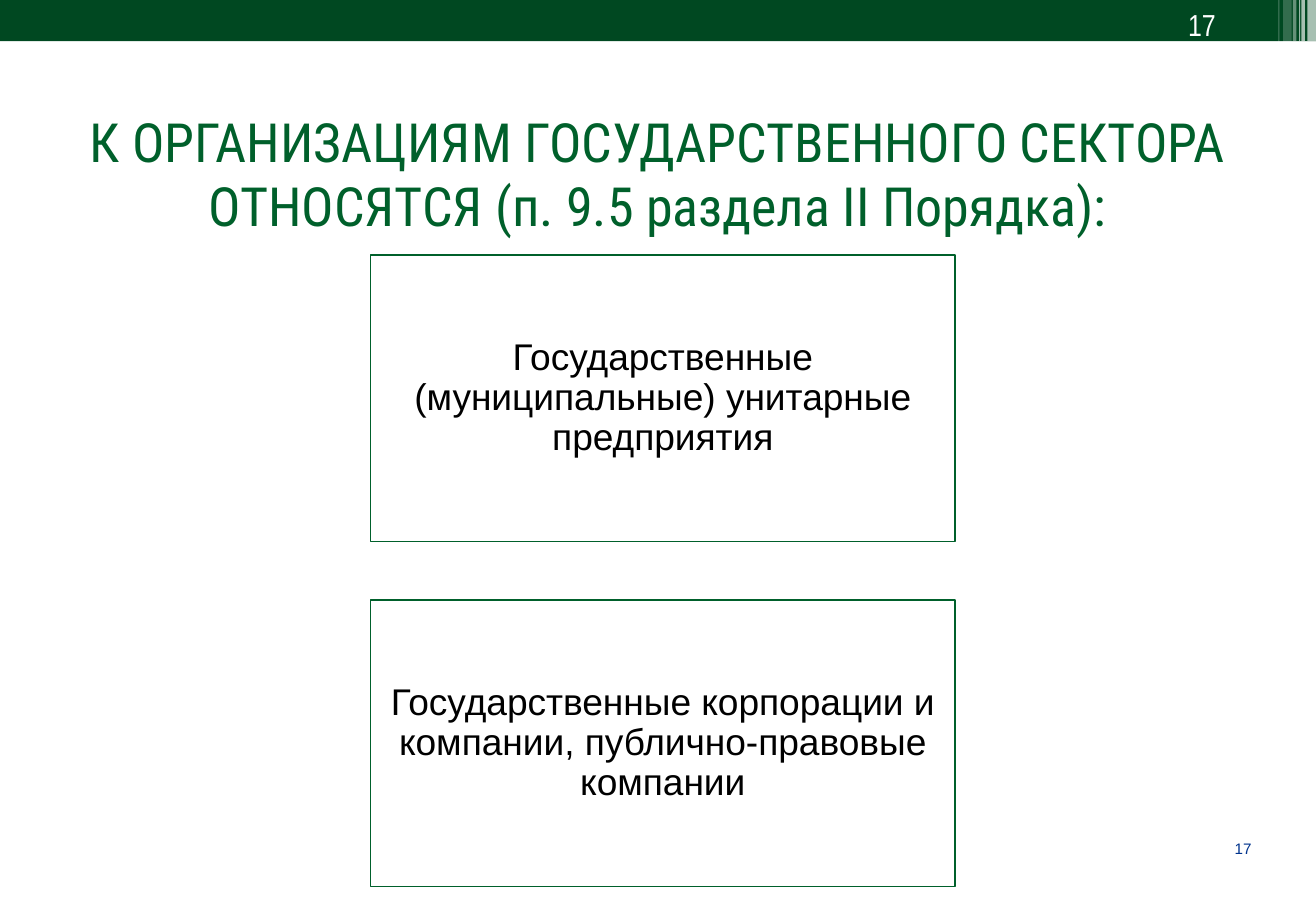
from pptx import Presentation
from pptx.dml.color import RGBColor
from pptx.enum.shapes import MSO_SHAPE as Shape
from pptx.enum.text import MSO_ANCHOR as Anchor, PP_ALIGN as Align
from pptx.oxml.ns import qn
from pptx.util import Inches, Pt
from lxml.etree import SubElement


def color(code):
    return RGBColor.from_string(code)


class SlideBuilder:
    WHITE = "FFFFFF"
    BLACK = "000000"
    GREEN = "00602B"
    DARK_GREEN = "004821"
    BLUE = "00338D"
    BODY_FONT = "Arial"
    NUMBER_FONT = "Arial Narrow"
    TITLE_FONT = "Roboto Condensed"

    def __init__(self, slide):
        self.slide = slide

    def set_text(self, frame, wording, size, font, ink, align, inset=None):
        frame.word_wrap = True
        if inset is not None:
            frame.margin_left = frame.margin_right = Inches(inset)
            frame.margin_top = frame.margin_bottom = Inches(inset)
        paragraph = frame.paragraphs[0]
        paragraph.text = wording
        paragraph.alignment = align
        paragraph.font.size = Pt(size)
        paragraph.font.name = font
        paragraph.font.color.rgb = color(ink)
        return paragraph

    def text(self, place, wording, size, font, ink, align=Align.LEFT, inset=None):
        box = self.slide.shapes.add_textbox(*map(Inches, place))
        self.set_text(box.text_frame, wording, size, font, ink, align, inset)

    def rectangle(self, place, fill, line=None, opacity=None):
        rectangle = self.slide.shapes.add_shape(Shape.RECTANGLE, *map(Inches, place))
        rectangle.shadow.inherit = False
        rectangle.fill.solid()
        rectangle.fill.fore_color.rgb = color(fill)
        if line:
            rectangle.line.color.rgb = color(line)
            rectangle.line.width = Pt(1)
        else:
            rectangle.line.fill.background()
        if opacity:
            tint = rectangle.element.spPr.find(qn("a:solidFill"))[0]
            SubElement(tint, qn("a:alpha")).set("val", str(opacity * 1000))
        return rectangle

    def card(self, place, wording):
        card = self.rectangle(place, self.WHITE, line=self.GREEN)
        card.text_frame.vertical_anchor = Anchor.MIDDLE
        paragraph = self.set_text(card.text_frame, wording, 22, self.BODY_FONT,
                                  self.BLACK, Align.CENTER, inset=0.09)
        paragraph.line_spacing = 0.9


def main():
    width, band_height = 10.83, 0.34
    deck = Presentation()
    deck.slide_width, deck.slide_height = Inches(width), Inches(7.5)
    builder = SlideBuilder(deck.slides.add_slide(deck.slide_layouts[6]))

    builder.text((9.87, 6.91, 0.43, 0.16), "17", 9, builder.BODY_FONT,
                 builder.BLUE, Align.RIGHT, inset=0)

    builder.rectangle((0, 0, width, band_height), builder.DARK_GREEN)
    stripes = [
        (10.76, 0.07, band_height, 65),
        (10.71, 0.03, band_height, 65),
        (10.69, 0.01, band_height, 60),
        (10.64, 0.03, band_height, 40),
        (10.56, 0.07, 0.36, 20),
        (10.52, 0.01, 0.36, 30),
    ]
    for left, stripe_width, height, opacity in stripes:
        builder.rectangle((left, 0, stripe_width, height), builder.WHITE, opacity=opacity)

    builder.text((9.68, 0, 0.9, 0.4), "17", 18, builder.NUMBER_FONT, builder.WHITE)
    builder.text(
        (0, 0.84, width, 1.18),
        "К ОРГАНИЗАЦИЯМ ГОСУДАРСТВЕННОГО СЕКТОРА ОТНОСЯТСЯ (п. 9.5 раздела II Порядка):",
        32, builder.TITLE_FONT, builder.GREEN, Align.CENTER)

    organizations = [
        "Государственные (муниципальные) унитарные предприятия",
        "Государственные корпорации и компании, публично-правовые компании",
    ]
    for row, organization in enumerate(organizations):
        builder.card((3.05, 2.1 + row * 2.84, 4.81, 2.36), organization)

    deck.save("out.pptx")


if __name__ == "__main__":
    main()
